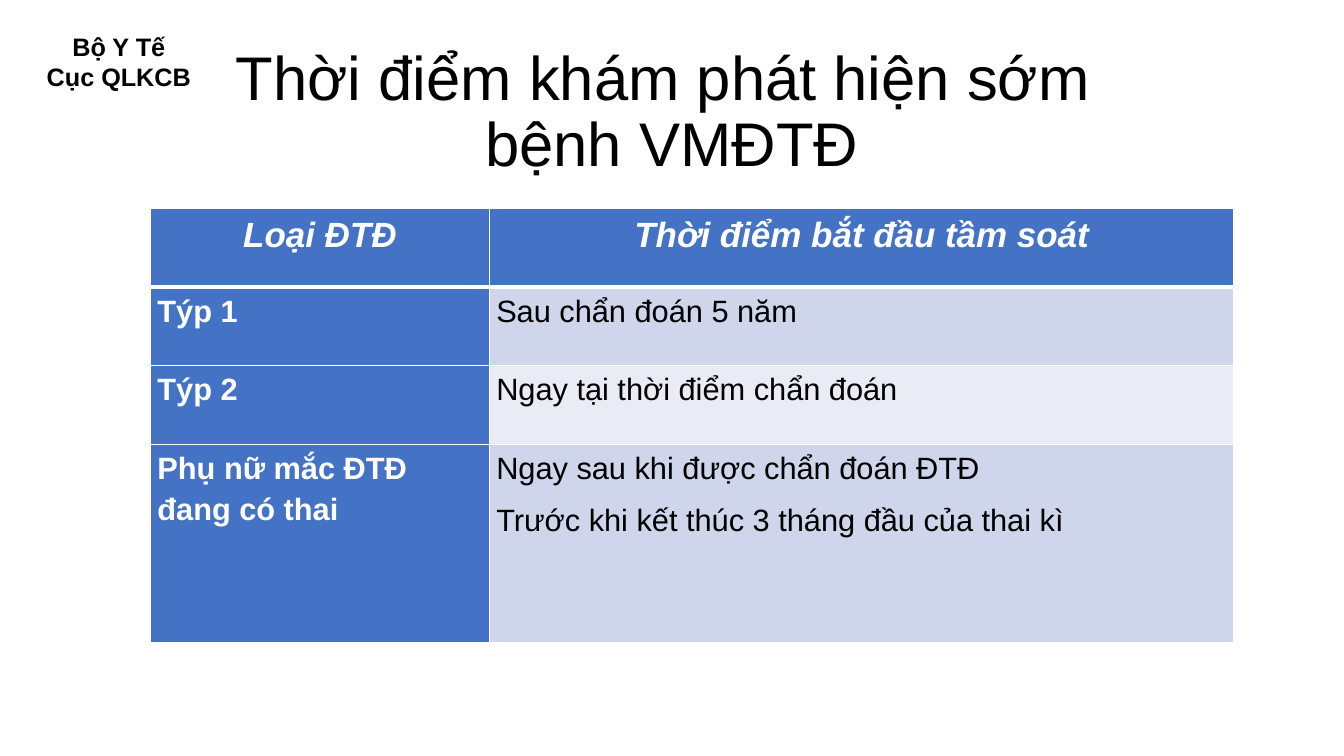
from lxml import etree
from pptx import Presentation
from pptx import util as u
from pptx.dml.color import RGBColor
from pptx.enum import text
from pptx.oxml import ns

BLACK = RGBColor(0x00, 0x00, 0x00)
WHITE = RGBColor(0xFF, 0xFF, 0xFF)
BLUE = RGBColor(0x44, 0x72, 0xC4)
BAND_DARK = RGBColor(0xCF, 0xD5, 0xEA)
BAND_LIGHT = RGBColor(0xE9, 0xEB, 0xF5)
FONT = "Arial"

COLUMN_WIDTHS = [242, 532]
ROW_HEIGHTS = [56.2, 56.2, 56.2, 141.4]
SCREENING_ROWS = [
    (["Loại ĐTĐ"], ["Thời điểm bắt đầu tầm soát"]),
    (["Týp 1"], ["Sau chẩn đoán 5 năm"]),
    (["Týp 2"], ["Ngay tại thời điểm chẩn đoán"]),
    (["Phụ nữ mắc ĐTĐ đang có thai"],
     ["Ngay sau khi được chẩn đoán ĐTĐ",
      "Trước khi kết thúc 3 tháng đầu của thai kì"]),
]


def add_run(paragraph, words, size, color=BLACK, bold=False, italic=False):
    run = paragraph.add_run()
    run.text = words
    run.font.name = FONT
    run.font.size = u.Pt(size)
    run.font.color.rgb = color
    run.font.bold = bold
    run.font.italic = italic


def add_paragraphs(frame, lines, align, **style):
    """Write one paragraph per line and return them."""
    for index, line in enumerate(lines):
        paragraph = frame.add_paragraph() if index else frame.paragraphs[0]
        paragraph.alignment = align
        add_run(paragraph, line, **style)
    return frame.paragraphs


def add_text_frame(slide, left, top, width, height):
    box = slide.shapes.add_textbox(u.Pt(left), u.Pt(top), u.Pt(width), u.Pt(height))
    box.text_frame.word_wrap = True
    return box.text_frame


def add_title(slide):
    frame = add_text_frame(slide, 66, 28.8, 828, 104.4)
    frame.vertical_anchor = text.MSO_ANCHOR.MIDDLE
    paragraph = frame.paragraphs[0]
    paragraph.alignment = text.PP_ALIGN.CENTER
    paragraph.line_spacing = 0.9
    add_run(paragraph, "Thời điểm khám phát hiện sớm ", 44)
    paragraph.add_line_break()
    add_run(paragraph, "bệnh VMĐTĐ", 44)


def add_agency_label(slide):
    frame = add_text_frame(slide, 12.2, 18.7, 145.4, 51)
    frame.auto_size = text.MSO_AUTO_SIZE.SHAPE_TO_FIT_TEXT
    add_paragraphs(frame, ["Bộ Y Tế", "Cục QLKCB"], text.PP_ALIGN.CENTER,
                   size=18, bold=True)


def set_borders(cell, row):
    """White rules, with a heavier one under the header row."""
    widths = {"L": 1, "R": 1, "T": 3 if row == 1 else 1, "B": 3 if row == 0 else 1}
    properties = cell._tc.get_or_add_tcPr()
    for side, width in widths.items():
        line = etree.SubElement(properties, ns.qn("a:ln" + side), w=str(u.Pt(width)))
        fill = etree.SubElement(line, ns.qn("a:solidFill"))
        etree.SubElement(fill, ns.qn("a:srgbClr"), val=str(WHITE))


def fill_cell(cell, row, column, lines):
    is_header = row == 0
    is_blue = is_header or column == 0
    band = BAND_DARK if row % 2 else BAND_LIGHT

    cell.margin_left = cell.margin_right = u.Pt(5)
    cell.margin_top = cell.margin_bottom = u.Pt(0)
    set_borders(cell, row)
    cell.fill.solid()
    cell.fill.fore_color.rgb = BLUE if is_blue else band

    align = text.PP_ALIGN.CENTER if is_header else text.PP_ALIGN.LEFT
    paragraphs = add_paragraphs(
        cell.text_frame, lines, align, size=25 if is_header else 22,
        color=WHITE if is_blue else BLACK, bold=is_blue, italic=is_header)
    for paragraph in paragraphs:
        paragraph.line_spacing = 1.2
        paragraph.space_after = u.Pt(8)


def add_screening_table(slide):
    frame = slide.shapes.add_table(
        len(ROW_HEIGHTS), len(COLUMN_WIDTHS), u.Pt(107.5), u.Pt(149),
        u.Pt(sum(COLUMN_WIDTHS)), u.Pt(sum(ROW_HEIGHTS)))
    table = frame.table
    for column, width in zip(table.columns, COLUMN_WIDTHS):
        column.width = u.Pt(width)
    for row, height in zip(table.rows, ROW_HEIGHTS):
        row.height = u.Pt(height)
    for row, contents in enumerate(SCREENING_ROWS):
        for column, lines in enumerate(contents):
            fill_cell(table.cell(row, column), row, column, lines)


def main():
    presentation = Presentation()
    presentation.slide_width = u.Pt(960)
    presentation.slide_height = u.Pt(540)
    slide = presentation.slides.add_slide(presentation.slide_layouts[6])

    # Heading
    add_title(slide)
    # Screening times by diabetes type
    add_screening_table(slide)
    # Issuing agency, top left
    add_agency_label(slide)

    presentation.save("out.pptx")


if __name__ == "__main__":
    main()
